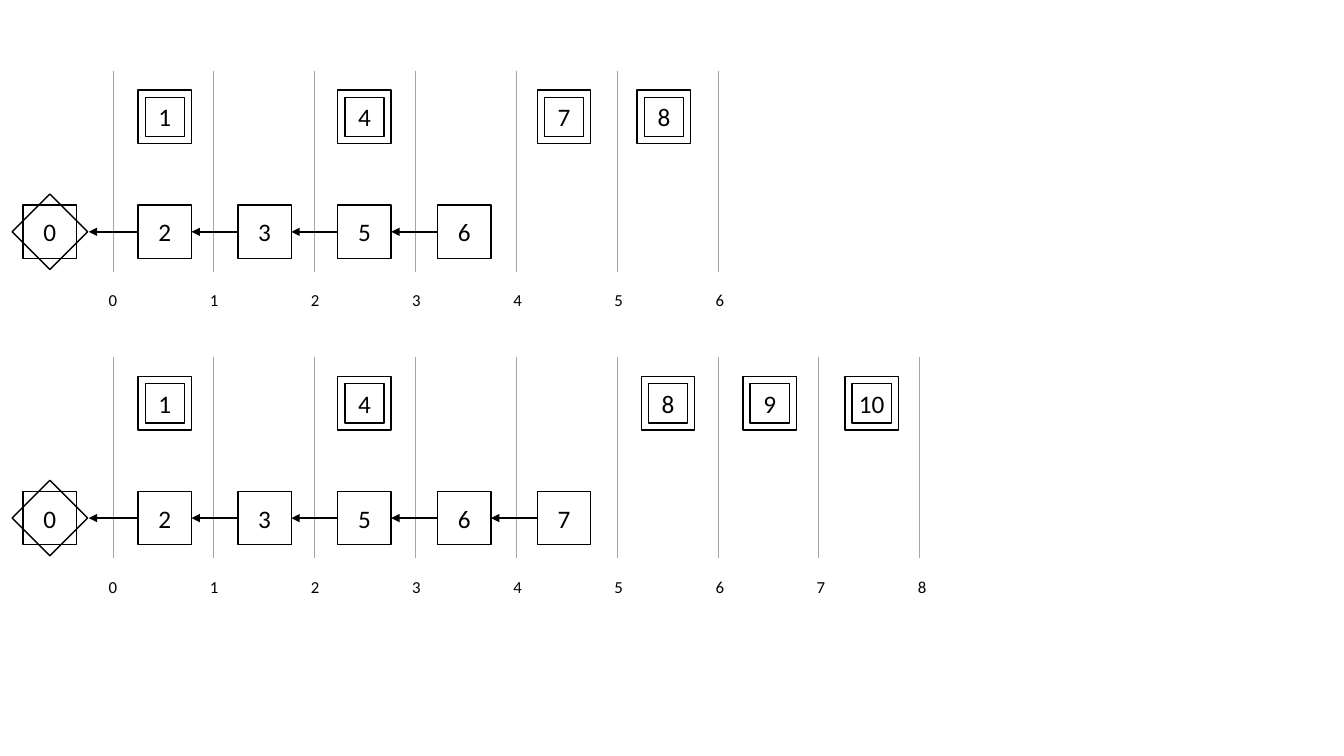
from lxml import etree
from pptx import Presentation
from pptx import util as u
from pptx.dml.color import RGBColor
from pptx.enum import shapes, text
from pptx.oxml import ns

COLORS = {"ink": "000000", "grid": "A5A5A5"}
FONT = "Calibri"
PLAIN = "{2D5ABB26-0587-4C30-8999-92F81FD0307C}"
SIDE = 0.53
INNER = 0.39
GRID_X = 1.12
FIRST_X = 1.37
STEP = 0.99
ROOT_X = 0.23
TIP_X = 0.88


def slot(i):
    """Left edge of the box in grid column i."""
    return FIRST_X + STEP * i


def write(frame, words, size, align):
    frame.text = words
    para = frame.paragraphs[0]
    para.alignment = align
    font = para.runs[0].font
    font.name = FONT
    font.size = u.Pt(size)
    font.color.rgb = RGBColor.from_string(COLORS["ink"])


def ink(line):
    line.color.rgb = RGBColor.from_string(COLORS["ink"])
    line.width = u.Pt(1)


def box(parent, x, y, side=SIDE, words=None):
    shape = parent.add_shape(shapes.MSO_SHAPE.RECTANGLE, u.Inches(x),
                             u.Inches(y), u.Inches(side), u.Inches(side))
    shape.shadow.inherit = False
    shape.fill.background()
    ink(shape.line)
    if words:
        shape.text_frame.vertical_anchor = text.MSO_ANCHOR.MIDDLE
        write(shape.text_frame, words, 18, text.PP_ALIGN.CENTER)
    return shape


def root(tree, y):
    """Box 0 with a diamond around it."""
    group = tree.add_group_shape().shapes
    box(group, ROOT_X, y, words="0")
    box(group, ROOT_X, y).rotation = 45


def double(tree, x, y, words):
    """Box with a second frame inside."""
    group = tree.add_group_shape().shapes
    gap = (SIDE - INNER) / 2
    box(group, x, y, words=words)
    box(group, x + gap, y + gap, INNER)


def arrow(tree, start, end, y):
    line = tree.add_connector(shapes.MSO_CONNECTOR.STRAIGHT, u.Inches(start),
                              u.Inches(y), u.Inches(end), u.Inches(y))
    ink(line.line)
    props = line._element.spPr
    stroke = props.find(ns.qn("a:ln"))
    etree.SubElement(stroke, ns.qn("a:tailEnd"), type="triangle")
    etree.SubElement(props, ns.qn("a:effectLst"))
    return line


def edge(cell):
    """Clear the cell and draw its left and right borders."""
    cell.fill.background()
    props = cell._tc.get_or_add_tcPr()
    for spot, tag in enumerate(("a:lnL", "a:lnR")):
        line = etree.Element(ns.qn(tag), w=str(u.Pt(0.5)))
        fill = etree.SubElement(line, ns.qn("a:solidFill"))
        etree.SubElement(fill, ns.qn("a:srgbClr"), val=COLORS["grid"])
        props.insert(spot, line)


def grid(tree, y, count):
    frame = tree.add_table(2, count, u.Inches(GRID_X), u.Inches(y),
                           u.Inches(count), u.Inches(2))
    table = frame.table
    table.first_row = table.horz_banding = False
    table._tbl.tblPr.find(ns.qn("a:tableStyleId")).text = PLAIN
    for cell in table.iter_cells():
        edge(cell)


def label(tree, i, y):
    area = tree.add_textbox(u.Inches(0.98 + i * 1.003), u.Inches(y),
                            u.Inches(0.29), u.Inches(0.3))
    area.text_frame.word_wrap = False
    area.text_frame.auto_size = text.MSO_AUTO_SIZE.SHAPE_TO_FIT_TEXT
    write(area.text_frame, str(i), 12, text.PP_ALIGN.LEFT)


def chain(tree, y, names):
    """Row of boxes, each pointing back to the one before."""
    root(tree, y)
    prev, end = None, TIP_X
    for i, name in enumerate(names):
        node = box(tree, slot(i), y, words=name)
        line = arrow(tree, slot(i), end, y + SIDE / 2)
        line.begin_connect(node, 1)
        if prev:
            line.end_connect(prev, 3)
        prev, end = node, slot(i) + SIDE


def diagram(tree, top, count, names, forks):
    grid(tree, top, count)
    for i in range(count + 1):
        label(tree, i, top + 2.13)
    chain(tree, top + 1.335, names)
    for name, x in forks:
        double(tree, x, top + 0.195, name)


def main():
    deck = Presentation()
    deck.slide_width, deck.slide_height = u.Inches(13.33), u.Inches(7.5)
    tree = deck.slides.add_slide(deck.slide_layouts[6]).shapes
    early = [("1", slot(0)), ("4", slot(2))]
    before = [("7", slot(4)), ("8", slot(5))]
    after = [(name, 6.36 + 1.01 * i) for i, name in enumerate(("8", "9", "10"))]
    diagram(tree, 0.7, 6, "2356", early + before)
    diagram(tree, 3.54, 8, "23567", early + after)
    deck.save("out.pptx")


if __name__ == "__main__":
    main()
